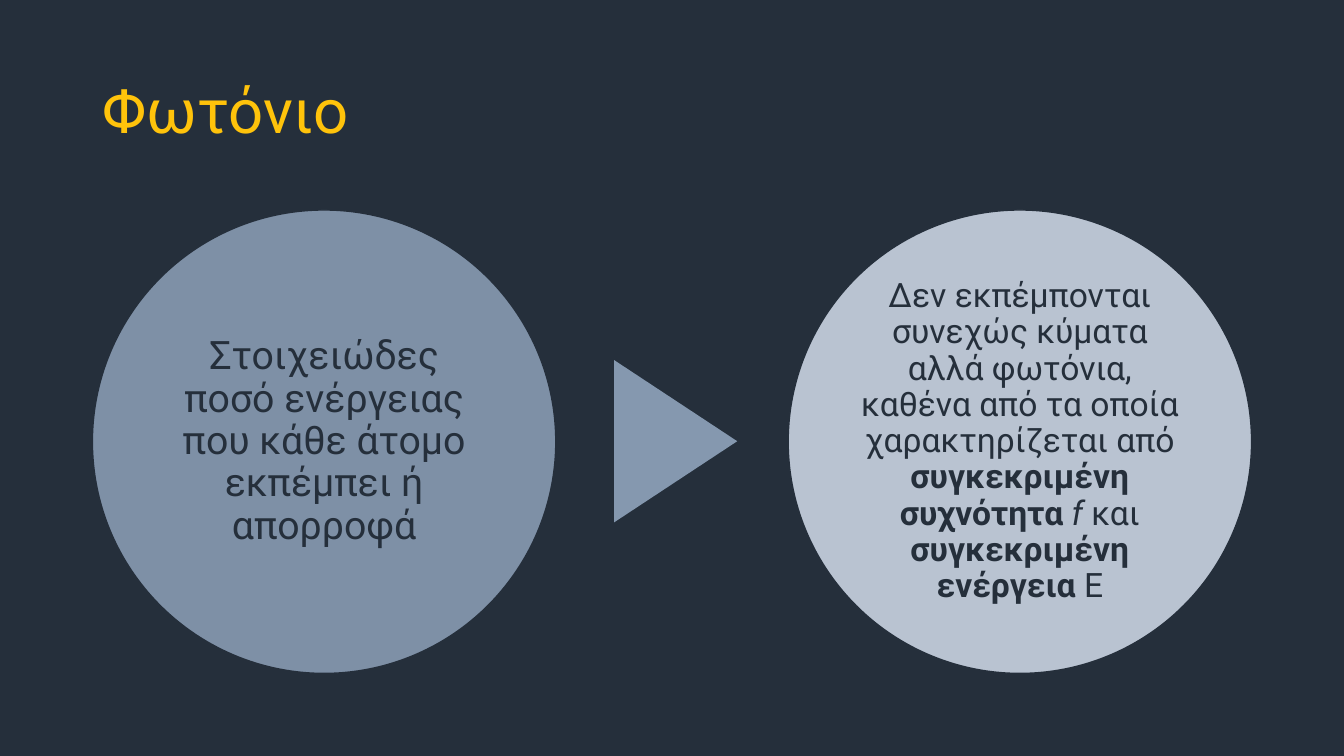
from dataclasses import dataclass

from pptx import Presentation
from pptx.dml.color import RGBColor
from pptx.enum.shapes import MSO_SHAPE
from pptx.enum.text import MSO_ANCHOR, PP_ALIGN
from pptx.util import Pt

OVAL = MSO_SHAPE.OVAL
TRIANGLE = MSO_SHAPE.ISOSCELES_TRIANGLE
MIDDLE = MSO_ANCHOR.MIDDLE
LEFT = PP_ALIGN.LEFT
CENTER = PP_ALIGN.CENTER

FONT = "Roboto"
NAVY = "252F3B"
YELLOW = "FFC30B"
MARGIN = 66
CIRCLE_TOP = 150
CIRCLE_SIZE = 331


@dataclass(frozen=True)
class TextRun:
    text: str
    bold: bool = False
    italic: bool = False


@dataclass(frozen=True)
class Circle:
    left: float
    fill: str
    size: float
    inset: float
    runs: tuple[TextRun, ...]


CIRCLES = (
    Circle(MARGIN, "7E90A6", 28, 2.8, (
        TextRun("Στοιχειώδες ποσό ενέργειας που κάθε άτομο εκπέμπει ή απορροφά"),
    )),
    Circle(563, "B9C3D1", 24, 2.4, (
        TextRun("Δεν εκπέμπονται συνεχώς κύματα αλλά φωτόνια, "
                "καθένα από τα οποία χαρακτηρίζεται από "),
        TextRun("συγκεκριμένη συχνότητα ", bold=True),
        TextRun("f ", italic=True),
        TextRun("και "),
        TextRun("συγκεκριμένη ενέργεια ", bold=True),
        TextRun("Ε"),
    )),
)


def color(value: str) -> RGBColor:
    return RGBColor.from_string(value)


def write_text(shape, runs: tuple[TextRun, ...], *, size: float, fill: str = NAVY,
               align=CENTER, inset_x: float, inset_y: float) -> None:
    frame = shape.text_frame
    frame.word_wrap = True
    frame.vertical_anchor = MIDDLE
    frame.margin_left = frame.margin_right = Pt(inset_x)
    frame.margin_top = frame.margin_bottom = Pt(inset_y)
    paragraph = frame.paragraphs[0]
    paragraph.alignment = align
    paragraph.line_spacing = 0.9
    for text_run in runs:
        run = paragraph.add_run()
        run.text = text_run.text
        run.font.name = FONT
        run.font.size = Pt(size)
        run.font.bold = text_run.bold
        run.font.italic = text_run.italic
        run.font.color.rgb = color(fill)


def add_filled_shape(slide, kind, left: float, top: float, width: float,
                     height: float, fill: str):
    shape = slide.shapes.add_shape(kind, Pt(left), Pt(top), Pt(width), Pt(height))
    shape.shadow.inherit = False
    shape.fill.solid()
    shape.fill.fore_color.rgb = color(fill)
    shape.line.fill.background()
    return shape


def add_circle(slide, circle: Circle) -> None:
    shape = add_filled_shape(slide, OVAL, circle.left, CIRCLE_TOP,
                             CIRCLE_SIZE, CIRCLE_SIZE, circle.fill)
    shape.line.color.rgb = color(NAVY)
    shape.line.width = Pt(1)
    write_text(shape, circle.runs, size=circle.size,
               inset_x=circle.inset, inset_y=circle.inset)


def main() -> None:
    presentation = Presentation()
    presentation.slide_width = Pt(960)
    presentation.slide_height = Pt(540)
    slide = presentation.slides.add_slide(presentation.slide_layouts[6])
    slide.background.fill.solid()
    slide.background.fill.fore_color.rgb = color(NAVY)

    title = slide.shapes.add_textbox(Pt(MARGIN), Pt(28.8), Pt(828), Pt(104.4))
    write_text(title, (TextRun("Φωτόνιο"),), size=44, fill=YELLOW,
               align=LEFT, inset_x=7.2, inset_y=3.6)

    for circle in CIRCLES:
        add_circle(slide, circle)

    arrow = add_filled_shape(slide, TRIANGLE, 424.6, 271.2, 116, 88, "8598AF")
    arrow.rotation = 90

    presentation.save("out.pptx")


if __name__ == "__main__":
    main()
